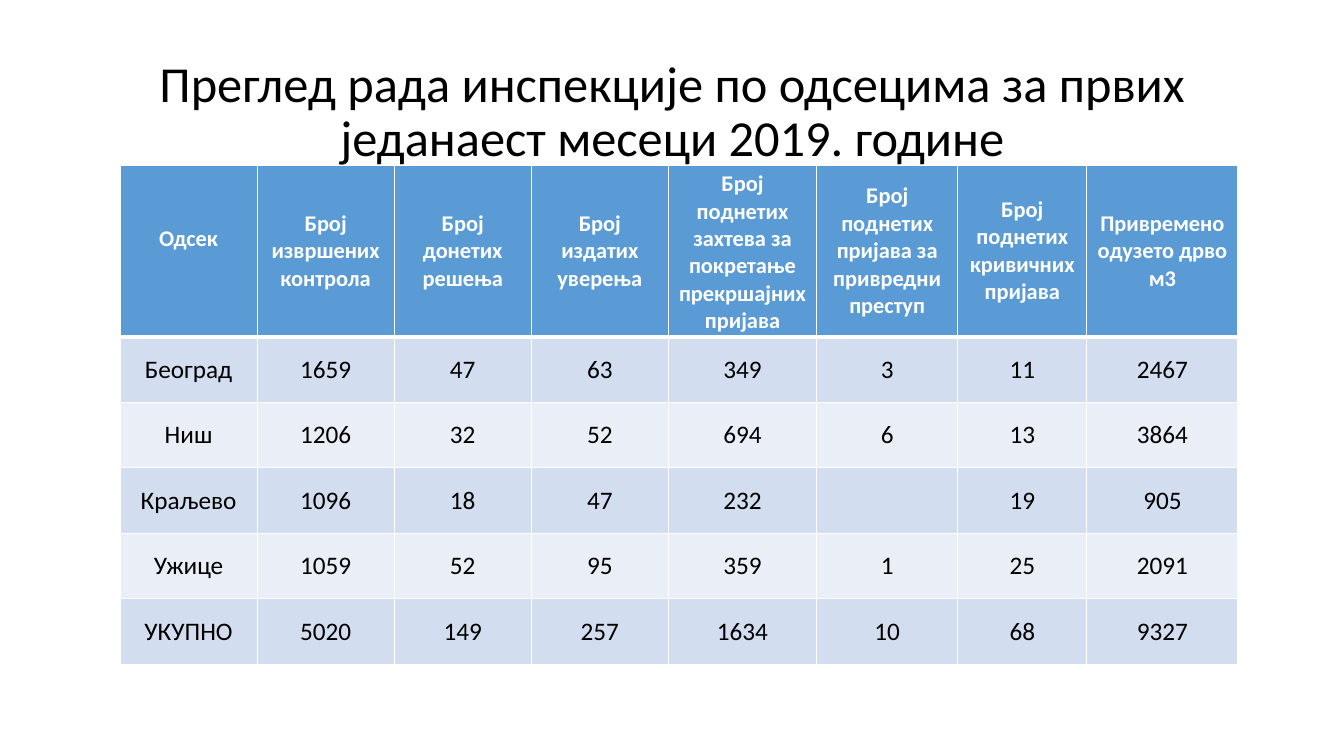
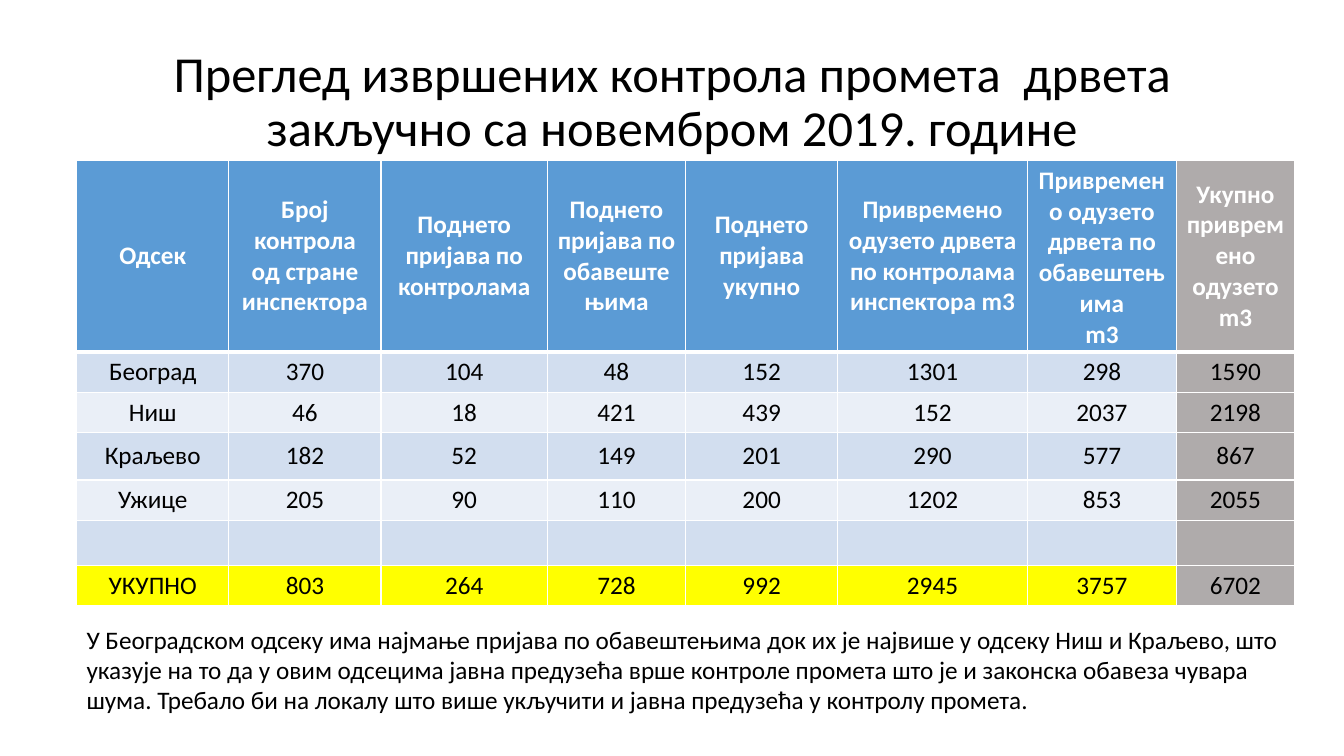
from lxml import etree
from pptx import Presentation
from pptx.dml.color import RGBColor
from pptx.enum.text import MSO_ANCHOR, PP_ALIGN
from pptx.oxml.ns import qn
from pptx.util import Inches, Pt

CENTER, LEFT = PP_ALIGN.CENTER, PP_ALIGN.LEFT
TOP, MIDDLE = MSO_ANCHOR.TOP, MSO_ANCHOR.MIDDLE

COLORS = {
    "text": "000000",
    "white": "FFFFFF",
    "header": "5B9BD5",
    "band_dark": "D2DEEF",
    "band_light": "EAEFF7",
    "gray": "AFABAB",
    "total": "FFFF00",
}
FONT = "Calibri"
TITLE_FORMAT = {"size": Pt(36), "name": FONT, "bold": False}
BODY_FORMAT = {"size": Pt(18), "name": FONT, "bold": False}

# Content of the two slides
SLIDES = [
    {
        "title": "Преглед рада инспекције по одсецима за првих једанаест месеци 2019. године",
        "title_height": 1.45,
        "table_place": (1.19, 1.64),
        "columns": [1.36, 1.36, 1.36, 1.36, 1.47, 1.4, 1.28, 1.5],
        "row_heights": [1.6] + [0.65] * 5,
        "header_size": 16,
        "first_header_top": 0.59,
        "highlight": False,
        "rows": [
            ["Одсек", "Број извршених контрола", "Број донетих решења",
             "Број издатих уверења",
             "Број поднетих захтева за покретање прекршајних пријава",
             "Број поднетих пријава за привредни преступ",
             "Број поднетих кривичних пријава", "Привремено одузето дрво м3"],
            ["Београд", "1659", "47", "63", "349", "3", "11", "2467"],
            ["Ниш", "1206", "32", "52", "694", "6", "13", "3864"],
            ["Краљево", "1096", "18", "47", "232", "", "19", "905"],
            ["Ужице", "1059", "52", "95", "359", "1", "25", "2091"],
            ["УКУПНО", "5020", "149", "257", "1634", "10", "68", "9327"],
        ],
        "note": None,
    },
    {
        "title": "Преглед извршених контрола промета  дрвета закључно са новембром 2019. године",
        "title_height": 1.25,
        "table_place": (0.76, 1.59),
        "columns": [1.51, 1.51, 1.65, 1.37, 1.51, 1.88, 1.48, 1.17],
        "row_heights": [1.78, 0.37, 0.37, 0.47, 0.37, 0.45, 0.37],
        "header_size": 18,
        "first_header_top": None,
        "highlight": True,
        "rows": [
            ["Одсек", "Број контрола од стране инспектора",
             "Поднето пријава по контролама", "Поднето пријава по обавештењима",
             "Поднето пријава укупно",
             "Привремено одузето дрвета по контролама инспектора m3",
             "Привремено одузето дрвета по обавештењима\nm3",
             "Укупно привремено одузето m3"],
            ["Београд", "370", "104", "48", "152", "1301", "298", "1590"],
            ["Ниш", "46", "18", "421", "439", "152", "2037", "2198"],
            ["Краљево", "182", "52", "149", "201", "290", "577", "867"],
            ["Ужице", "205", "90", "110", "200", "1202", "853", "2055"],
            [""] * 8,
            ["УКУПНО", "803", "264", "728", "992", "2945", "3757", "6702"],
        ],
        "note": "У Београдском одсеку има најмање пријава по обавештењима док их је "
                "највише у одсеку Ниш и Краљево, што указује на то да у овим одсецима "
                "јавна предузећа врше контроле промета што је и законска обавеза чувара "
                "шума. Требало би на локалу што више укључити и јавна предузећа у "
                "контролу промета.",
    },
]


def write_text(text_frame, text, formats, color, alignment, line_spacing=1.0):
    text_frame.word_wrap = True
    text_frame.text = text
    for paragraph in text_frame.paragraphs:
        paragraph.alignment = alignment
        paragraph.line_spacing = line_spacing
        for run in paragraph.runs:
            for name, value in formats.items():
                setattr(run.font, name, value)
            run.font.color.rgb = RGBColor.from_string(COLORS[color])


def add_borders(cell, top, bottom):
    properties = cell._tc.get_or_add_tcPr()
    widths = {"a:lnL": 1, "a:lnR": 1, "a:lnT": top, "a:lnB": bottom}
    for index, (tag, width) in enumerate(widths.items()):
        line = etree.Element(qn(tag), w=str(Pt(width)))
        fill = etree.SubElement(line, qn("a:solidFill"))
        etree.SubElement(fill, qn("a:srgbClr"), val=COLORS["white"])
        properties.insert(index, line)


presentation = Presentation()
presentation.slide_width = Inches(13.33)
presentation.slide_height = Inches(7.5)
blank_layout = presentation.slide_layouts[6]

for content in SLIDES:
    slide = presentation.slides.add_slide(blank_layout)

    # Title
    title = slide.shapes.add_textbox(
        Inches(0.92), Inches(0.4), Inches(11.5), Inches(content["title_height"]))
    title.text_frame.vertical_anchor = MIDDLE
    write_text(title.text_frame, content["title"], TITLE_FORMAT, "text", CENTER, 0.9)

    # Table grid
    rows, columns, heights = content["rows"], content["columns"], content["row_heights"]
    left, top = content["table_place"]
    table = slide.shapes.add_table(
        len(rows), len(columns), Inches(left), Inches(top),
        Inches(sum(columns)), Inches(sum(heights))).table
    table.horz_banding = False
    for column, width in zip(table.columns, columns):
        column.width = Inches(width)
    for row, height in zip(table.rows, heights):
        row.height = Inches(height)

    # Table cells
    header_format = {"size": Pt(content["header_size"]), "name": FONT, "bold": True}
    last_row, last_column = len(rows) - 1, len(columns) - 1
    for row_index, values in enumerate(rows):
        is_header = row_index == 0
        for column_index, value in enumerate(values):
            cell = table.cell(row_index, column_index)
            if content["highlight"] and column_index == last_column:
                fill = "gray"
            elif is_header:
                fill = "header"
            elif content["highlight"] and row_index == last_row:
                fill = "total"
            else:
                fill = "band_dark" if row_index % 2 else "band_light"
            cell.fill.solid()
            cell.fill.fore_color.rgb = RGBColor.from_string(COLORS[fill])
            cell.vertical_anchor = MIDDLE
            write_text(cell.text_frame, value,
                       header_format if is_header else BODY_FORMAT,
                       "white" if is_header else "text", CENTER)
            add_borders(cell, 3 if row_index == 1 else 1, 3 if is_header else 1)

    # First heading set down from the top edge
    if content["first_header_top"]:
        first_header = table.cell(0, 0)
        first_header.vertical_anchor = TOP
        first_header.margin_top = Inches(content["first_header_top"])

    # Note under the table
    if content["note"]:
        note = slide.shapes.add_textbox(
            Inches(left), Inches(6.14), Inches(sum(columns)), Inches(1.01))
        write_text(note.text_frame, content["note"], BODY_FORMAT, "text", LEFT)

presentation.save("out.pptx")
